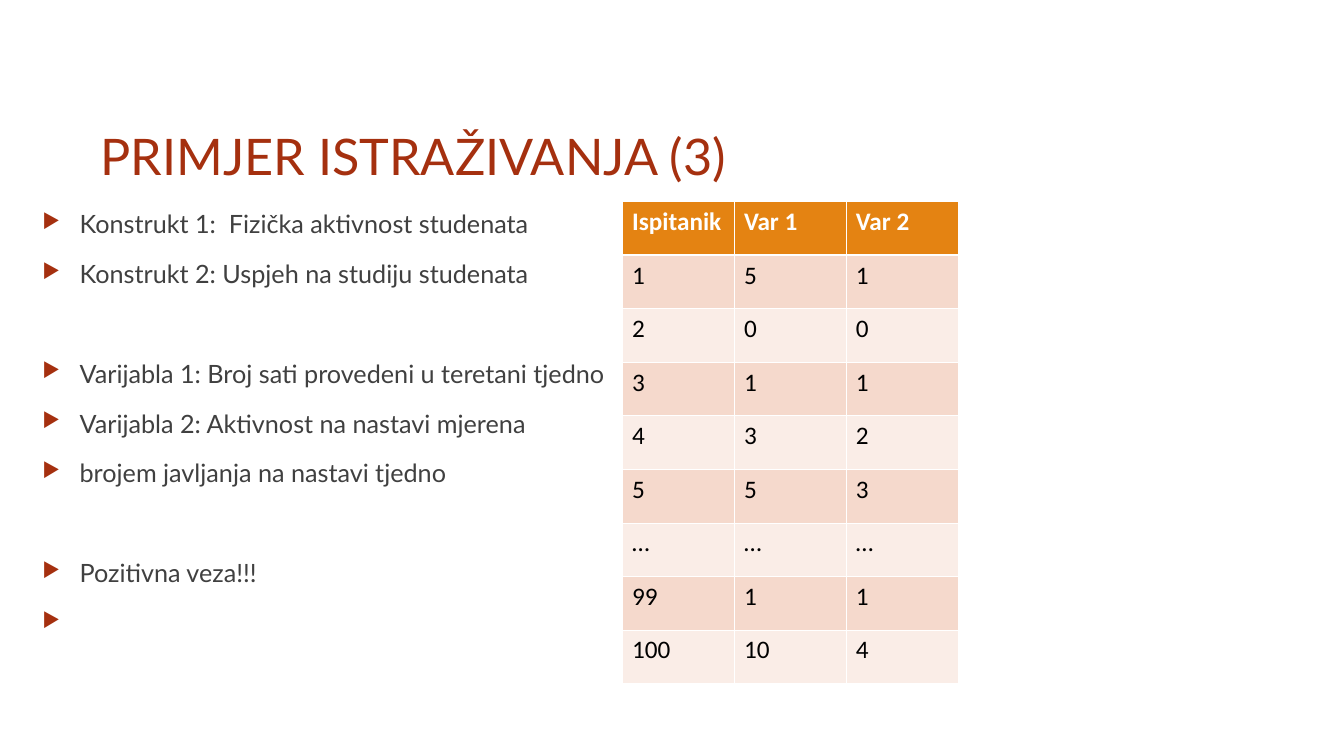
from dataclasses import dataclass

from lxml.etree import SubElement
from pptx import Presentation
from pptx.dml.color import RGBColor
from pptx.enum.text import MSO_ANCHOR
from pptx.oxml.ns import qn
from pptx.util import Inches, Pt


@dataclass(frozen=True)
class Theme:
    accent: str = "A5300F"
    body: str = "404040"
    header_fill: str = "E48312"
    header_text: str = "FFFFFF"
    cell_text: str = "000000"
    odd_row: str = "F5D9CC"
    even_row: str = "FAEDE7"
    border: str = "FFFFFF"
    text_font: str = "Lato"
    table_font: str = "Calibri"
    title_size: int = 36
    body_size: int = 18


THEME = Theme()

TITLE = "PRIMJER ISTRAŽIVANJA (3)"
BULLET_GROUPS = [
    ["Konstrukt 1:  Fizička aktivnost studenata",
     "Konstrukt 2: Uspjeh na studiju studenata"],
    ["Varijabla 1: Broj sati provedeni u teretani tjedno",
     "Varijabla 2: Aktivnost na nastavi mjerena",
     "brojem javljanja na nastavi tjedno"],
    ["Pozitivna veza!!!", " "],
]
RESPONDENTS = [
    ["Ispitanik", "Var 1", "Var 2"],
    ["1", "5", "1"],
    ["2", "0", "0"],
    ["3", "1", "1"],
    ["4", "3", "2"],
    ["5", "5", "3"],
    ["…", "…", "…"],
    ["99", "1", "1"],
    ["100", "10", "4"],
]


def style_font(font, name, size, color, bold=False):
    font.name = name
    font.size = Pt(size)
    font.bold = bold
    font.color.rgb = RGBColor.from_string(color)


def add_text_frame(slide, left, top, width, height):
    box = slide.shapes.add_textbox(Inches(left), Inches(top), Inches(width), Inches(height))
    box.text_frame.word_wrap = True
    return box.text_frame


def add_title(slide):
    frame = add_text_frame(slide, 0.9, 0.31, 8.25, 1.58)
    frame.vertical_anchor = MSO_ANCHOR.BOTTOM
    para = frame.paragraphs[0]
    para.text = TITLE
    style_font(para.font, THEME.text_font, THEME.title_size, THEME.accent)


def set_bullet(para):
    properties = para._p.get_or_add_pPr()
    properties.set("marL", str(Inches(0.37)))
    properties.set("indent", str(Inches(-0.37)))
    color = SubElement(properties, qn("a:buClr"))
    SubElement(color, qn("a:srgbClr"), val=THEME.accent)
    SubElement(properties, qn("a:buSzPct"), val="80000")
    SubElement(properties, qn("a:buChar"), char="▶")


def add_bullets(slide):
    """Write the bullet groups, with one line's gap between groups."""
    frame = add_text_frame(slide, 0.42, 2.02, 8.73, 4.4)
    frame.margin_left = frame.margin_right = 0
    para = None
    for group in BULLET_GROUPS:
        for position, text in enumerate(group):
            starts_later_group = para is not None and position == 0
            para = frame.paragraphs[0] if para is None else frame.add_paragraph()
            para.text = text
            para.space_before = Pt(47.6 if starts_later_group else 12)
            para.space_after = Pt(2)
            set_bullet(para)
            style_font(para.font, THEME.text_font, THEME.body_size, THEME.body)


def set_borders(cell, top, bottom):
    """Draw all four sides; top and bottom are widths in points."""
    properties = cell._tc.get_or_add_tcPr()
    widths = {"a:lnL": 0.45, "a:lnR": 0.45, "a:lnT": top, "a:lnB": bottom}
    for tag, width in widths.items():
        line = SubElement(properties, qn(tag), w=str(Pt(width)))
        fill = SubElement(line, qn("a:solidFill"))
        SubElement(fill, qn("a:srgbClr"), val=THEME.border)


def fill_cell(cell, text, row):
    is_header = row == 0
    cell.text = text
    set_borders(cell, 1.47 if row == 1 else 0.45, 1.47 if is_header else 0.45)
    band = THEME.odd_row if row % 2 else THEME.even_row
    cell.fill.solid()
    cell.fill.fore_color.rgb = RGBColor.from_string(THEME.header_fill if is_header else band)
    color = THEME.header_text if is_header else THEME.cell_text
    style_font(cell.text_frame.paragraphs[0].font, THEME.table_font,
               THEME.body_size, color, bold=is_header)


def add_respondent_table(slide):
    table = slide.shapes.add_table(len(RESPONDENTS), len(RESPONDENTS[0]), Inches(6.17),
                                   Inches(2), Inches(3.33), Inches(4.78)).table
    for row, values in enumerate(RESPONDENTS):
        for column, text in enumerate(values):
            fill_cell(table.cell(row, column), text, row)


def main():
    deck = Presentation()
    deck.slide_width = Inches(13.33)
    deck.slide_height = Inches(7.5)
    slide = deck.slides.add_slide(deck.slide_layouts[6])
    add_title(slide)
    add_bullets(slide)
    add_respondent_table(slide)
    deck.save("out.pptx")


if __name__ == "__main__":
    main()
